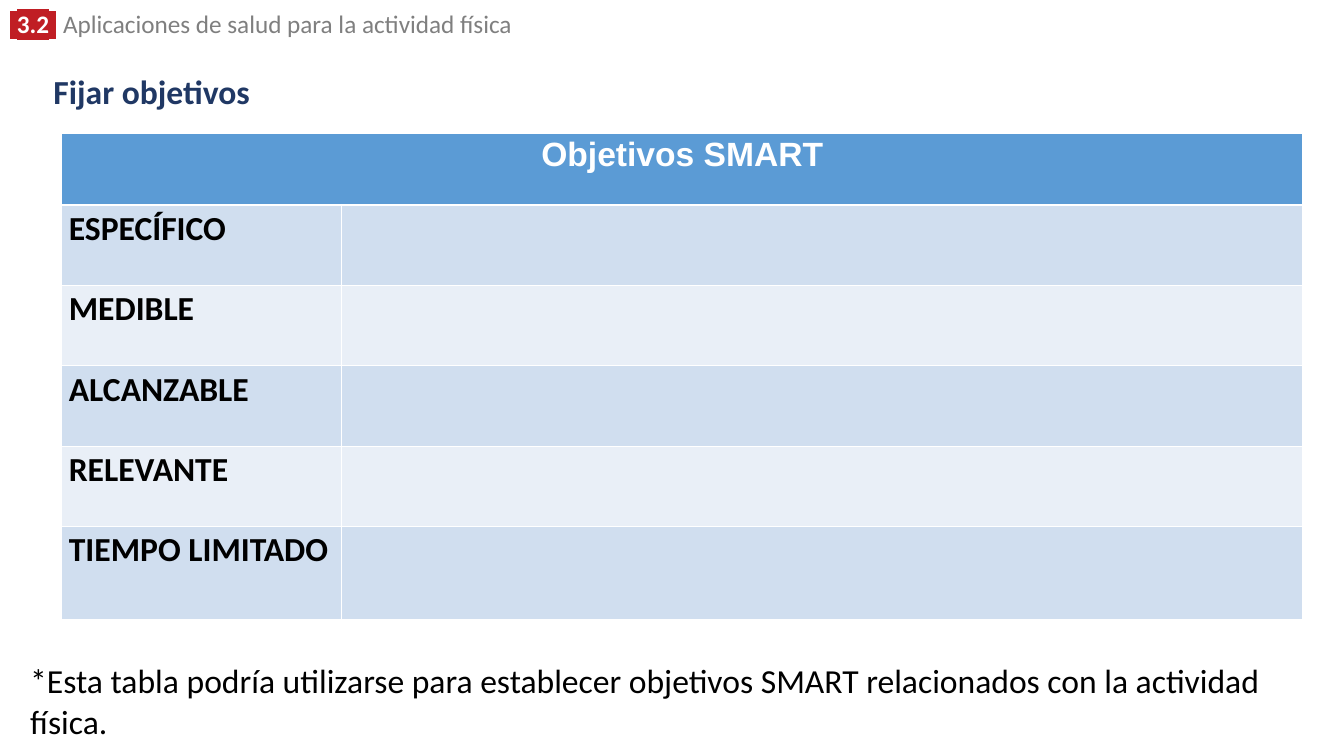
import lxml.etree
import pptx
import pptx.dml.color
import pptx.enum.text
import pptx.oxml
import pptx.oxml.ns
import pptx.util

Pt = pptx.util.Pt
RGBColor = pptx.dml.color.RGBColor
ALIGN = pptx.enum.text.PP_ALIGN
ANCHOR = pptx.enum.text.MSO_ANCHOR
AUTO_SIZE = pptx.enum.text.MSO_AUTO_SIZE

WHITE = RGBColor(0xFF, 0xFF, 0xFF)
BLACK = RGBColor(0x00, 0x00, 0x00)
GRAY = RGBColor(0x7F, 0x7F, 0x7F)
RED = RGBColor(0xC0, 0x1E, 0x24)
NAVY = RGBColor(0x20, 0x38, 0x64)
BLUE = RGBColor(0x5B, 0x9B, 0xD5)
BANDS = (RGBColor(0xD0, 0xDE, 0xEF), RGBColor(0xE9, 0xEF, 0xF7))

THIN, THICK = 0.67, 2
GOALS = ("ESPECÍFICO", "MEDIBLE", "ALCANZABLE", "RELEVANTE", "TIEMPO LIMITADO")
COLUMN_WIDTHS = (200, 686.3)
ROW_HEIGHTS = (51.6, 57.4, 57.4, 57.4, 57.4, 66.6)


def set_values(target, values):
    for name, value in values.items():
        setattr(target, name, value)


def add_run(paragraph, text, font_name, size, color, bold=False, highlight=None):
    run = paragraph.add_run()
    run.text = text
    set_values(run.font, {"name": font_name, "size": Pt(size), "bold": bold})
    run.font.color.rgb = color
    if highlight is not None:
        mark = pptx.oxml.parse_xml(
            f'<a:highlight {pptx.oxml.ns.nsdecls("a")}><a:srgbClr val="{highlight}"/></a:highlight>'
        )
        run.font.fill._xPr.find(pptx.oxml.ns.qn("a:solidFill")).addnext(mark)


def place(shape, left, top, width, height):
    set_values(shape, {"left": Pt(left), "top": Pt(top), "width": Pt(width), "height": Pt(height)})


def add_section_header(slide):
    shape = slide.shapes.add_textbox(Pt(0), Pt(6.5), Pt(685.5), Pt(24.5))
    set_values(shape.text_frame, {"word_wrap": True, "auto_size": AUTO_SIZE.SHAPE_TO_FIT_TEXT})
    paragraph = shape.text_frame.paragraphs[0]
    paragraph.line_spacing = 0.8
    for text, font_name in ((" ", "Arial"), ("3.2", "Calibri"), (" ", "Arial")):
        add_run(paragraph, text, font_name, 18, WHITE, True, RED)
    add_run(paragraph, " ", "Arial", 18, GRAY)
    add_run(paragraph, "Aplicaciones de salud para la actividad física", "Calibri", 18, GRAY)


def fill_placeholder(shape, box, text, color, bold, anchor, paragraph_values):
    place(shape, *box)
    set_values(shape.text_frame, {
        "word_wrap": True, "auto_size": AUTO_SIZE.NONE, "vertical_anchor": anchor,
    })
    paragraph = shape.text_frame.paragraphs[0]
    properties = paragraph._p.get_or_add_pPr()
    set_values(paragraph, {"alignment": ALIGN.LEFT, "space_before": Pt(0), **paragraph_values})
    properties.set("marL", "0")
    properties.set("indent", "0")
    lxml.etree.SubElement(properties, pptx.oxml.ns.qn("a:buNone"))
    add_run(paragraph, text, "Calibri", 24, color, bold)


def set_borders(cell, top, bottom):
    properties = cell._tc.get_or_add_tcPr()
    widths = {"lnL": THIN, "lnR": THIN, "lnT": top, "lnB": bottom}
    for position, (side, width) in enumerate(widths.items()):
        line = pptx.oxml.parse_xml(
            f'<a:{side} {pptx.oxml.ns.nsdecls("a")} w="{Pt(width)}"><a:solidFill>'
            f'<a:srgbClr val="{WHITE}"/></a:solidFill></a:{side}>'
        )
        properties.insert(position, line)


def format_cell(cell, row):
    set_values(cell, {
        "margin_left": Pt(5), "margin_right": Pt(5),
        "margin_top": Pt(2.5), "margin_bottom": Pt(2.5),
    })
    cell.fill.solid()
    cell.fill.fore_color.rgb = BLUE if row == 0 else BANDS[(row - 1) % 2]
    set_borders(cell, THICK if row == 1 else THIN, THICK if row == 0 else THIN)


def add_goals_table(slide):
    frame = slide.shapes.add_table(
        len(ROW_HEIGHTS), len(COLUMN_WIDTHS), Pt(44.2), Pt(95),
        Pt(sum(COLUMN_WIDTHS)), Pt(sum(ROW_HEIGHTS)),
    )
    table = frame.table
    for column, width in zip(table.columns, COLUMN_WIDTHS):
        column.width = Pt(width)
    for row, height in enumerate(ROW_HEIGHTS):
        table.rows[row].height = Pt(height)
        for cell in table.rows[row].cells:
            format_cell(cell, row)
    table.cell(0, 0).merge(table.cell(0, 1))
    heading = table.cell(0, 0).text_frame.paragraphs[0]
    heading.alignment = ALIGN.CENTER
    add_run(heading, "Objetivos SMART", "Arial", 24, WHITE, True)
    for row, goal in enumerate(GOALS, 1):
        add_run(table.cell(row, 0).text_frame.paragraphs[0], goal, "Calibri", 24, BLACK, True)


def main():
    presentation = pptx.Presentation()
    set_values(presentation, {"slide_width": Pt(960), "slide_height": Pt(540)})
    slide = presentation.slides.add_slide(presentation.slide_layouts[1])
    add_section_header(slide)
    add_goals_table(slide)
    fill_placeholder(
        slide.shapes.title, (31, 38, 871, 57.6), "Fijar objetivos",
        NAVY, True, ANCHOR.MIDDLE, {"line_spacing": 0.9},
    )
    fill_placeholder(
        slide.placeholders[1], (14.4, 468, 935.3, 63.4),
        "*Esta tabla podría utilizarse para establecer objetivos SMART "
        "relacionados con la actividad física.",
        BLACK, False, ANCHOR.TOP, {"line_spacing": 1.0, "space_after": Pt(6)},
    )
    presentation.save("out.pptx")


if __name__ == "__main__":
    main()
